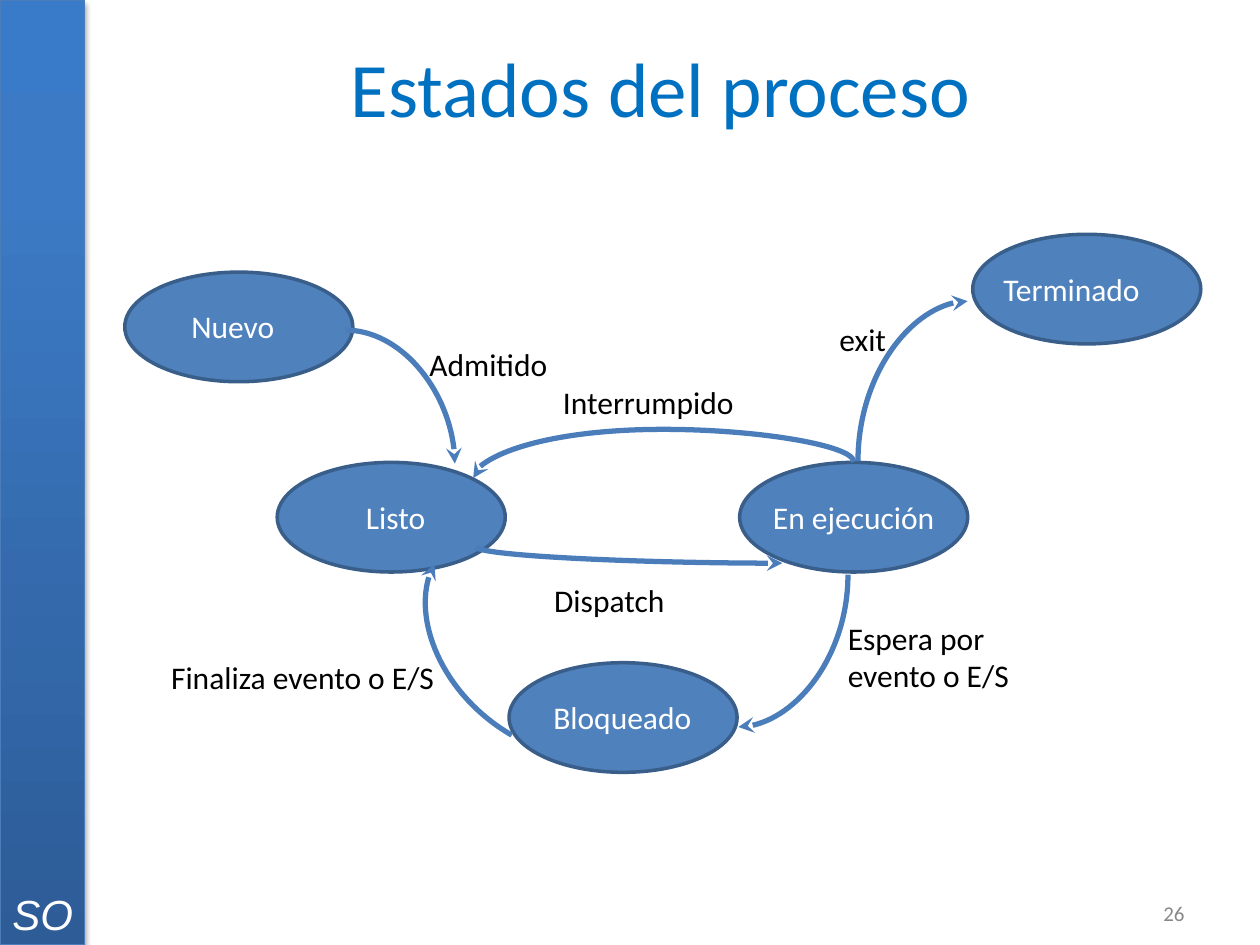
import copy
from typing import NamedTuple

import pptx
import pptx.dml.color
import pptx.enum.shapes
import pptx.enum.text
import pptx.oxml
import pptx.oxml.ns
import pptx.util

RGBColor = pptx.dml.color.RGBColor
Align = pptx.enum.text.PP_ALIGN
Anchor = pptx.enum.text.MSO_ANCHOR
ShapeType = pptx.enum.shapes.MSO_SHAPE

WHITE = RGBColor(0xFF, 0xFF, 0xFF)
BLACK = RGBColor(0x00, 0x00, 0x00)
GRAY = RGBColor(0x88, 0x88, 0x88)
TITLE_BLUE = RGBColor(0x00, 0x70, 0xC0)
STATE_FILL = RGBColor(0x4F, 0x81, 0xBD)
STATE_LINE = RGBColor(0x39, 0x5E, 0x89)
ARROW_BLUE = RGBColor(0x4A, 0x7D, 0xBA)
BAR_STOPS = [
    (0, RGBColor(0x2D, 0x5C, 0x97)),
    (0.8, RGBColor(0x3C, 0x7A, 0xC5)),
    (1, RGBColor(0x39, 0x7B, 0xC9)),
]

SLIDE_WIDTH = pptx.util.Inches(10)
SLIDE_HEIGHT = pptx.util.Inches(7.5)
COLUMNS, ROWS = 100, 75
STATE_WIDTH, STATE_HEIGHT = 18.1, 8.7
CAPTION_DROP, LINE_HEIGHT = 2.3, 4

STATES = [
    ("Nuevo", 0, 3, 4.3, 10.2, Align.LEFT),
    ("Listo", 12.1, 18.1, 4.3, 10.2, Align.CENTER),
    ("Bloqueado", 30.5, 34, 0.7, 16.6, Align.CENTER),
    ("En ejecución", 48.8, 18.1, 0, 18.1, Align.CENTER),
    ("Terminado", 67.3, 0, -0.8, 17.3, Align.CENTER),
]
ARROWS = [
    ((17.5, 7.6, 8.7, 10.6), 0, {}),
    ((56.2, 7.3, 12.7, 8.7), 270, {}),
    ((42.1, 3.6, 1.3, 30.2), 90, {"bend": -1.98}),
    ((47, 28.7, 12.1, 8.7), 90, {}),
    ((39.4, 13.3, 1.3, 24.3), 270, {"flip": True}),
    ((21.6, 28.6, 12.1, 8.7), 210, {}),
]
LABELS = [
    ("Admitido", (23.2, 8.3, 17.7, LINE_HEIGHT), Align.LEFT),
    ("exit", (53.5, 6.3, 7.9, LINE_HEIGHT), Align.RIGHT),
    ("Espera por evento o E/S", (56.4, 30, 20.1, 7.1), Align.LEFT),
    ("Finaliza evento o E/S", (2.7, 33.1, 24, LINE_HEIGHT), Align.LEFT),
    ("Interrumpido", (33.8, 11.3, 19, LINE_HEIGHT), Align.LEFT),
    ("Dispatch", (33.1, 27, 15.7, LINE_HEIGHT), Align.LEFT),
]


class Box(NamedTuple):
    left: float
    top: float
    width: float
    height: float

    def inner(self, left, top, width, height):
        return Box(self.left + left, self.top + top, width, height)

    def lengths(self):
        column, row = SLIDE_WIDTH / COLUMNS, SLIDE_HEIGHT / ROWS
        return (round(self.left * column), round(self.top * row),
                round(self.width * column), round(self.height * row))


def shadow_element(blur, distance, angle, alpha):
    return pptx.oxml.parse_xml(
        f'<a:effectLst {pptx.oxml.ns.nsdecls("a")}>'
        f'<a:outerShdw blurRad="{pptx.util.Pt(blur)}" dist="{pptx.util.Pt(distance)}" '
        f'dir="{angle * 60000}" algn="tl" rotWithShape="0">'
        f'<a:srgbClr val="000000"><a:alpha val="{alpha * 1000}"/></a:srgbClr>'
        '</a:outerShdw></a:effectLst>')


def write_text(shape, text, size=18, font="Calibri", color=BLACK,
               align=Align.LEFT, anchor=Anchor.TOP, italic=False):
    frame = shape.text_frame
    frame.word_wrap = True
    frame.vertical_anchor = anchor
    paragraph = frame.paragraphs[0]
    paragraph.alignment = align
    run = paragraph.add_run()
    run.text = text
    run.font.size = pptx.util.Pt(size)
    run.font.name = font
    run.font.italic = italic
    run.font.color.rgb = color
    return run


def add_text(shapes, box, text, **formatting):
    return write_text(shapes.add_textbox(*box.lengths()), text, **formatting)


def add_side_bar(slide, box):
    bar = slide.shapes.add_shape(ShapeType.RECTANGLE, *box.lengths())
    bar.fill.gradient()
    bar.fill.gradient_angle = 90
    last_stop = bar._element.xpath(".//a:gs")[-1]
    last_stop.addnext(copy.deepcopy(last_stop))
    for stop, (position, color) in zip(bar.fill.gradient_stops, BAR_STOPS):
        stop.position = position
        stop.color.rgb = color
    bar.line.color.rgb = ARROW_BLUE
    bar.line.width = pptx.util.Pt(0.75)
    bar._element.spPr.append(shadow_element(3.1, 1.8, 90, 35))
    add_text(slide.shapes, box.inner(0, box.height - 5, 6.9, 5), "SO",
             size=24, font="Arial", color=WHITE, italic=True)


def add_title(slide, box):
    title = slide.shapes.title
    title.left, title.top, title.width, title.height = box.lengths()
    run = write_text(title, "Estados del proceso", size=44, color=TITLE_BLUE,
                     align=Align.CENTER, anchor=Anchor.MIDDLE)
    fill = run._r.xpath("./a:rPr/a:solidFill")[0]
    fill.addnext(shadow_element(3, 3, 45, 43))


def add_state(shapes, box, name, caption_left, caption_width, align):
    ellipse = shapes.add_shape(ShapeType.OVAL, *box.lengths())
    ellipse.shadow.inherit = False
    ellipse.fill.solid()
    ellipse.fill.fore_color.rgb = STATE_FILL
    ellipse.line.color.rgb = STATE_LINE
    ellipse.line.width = pptx.util.Pt(2)
    caption = box.inner(caption_left, CAPTION_DROP, caption_width, LINE_HEIGHT)
    add_text(shapes, caption, name, color=WHITE, align=align)


def add_arrow(shapes, box, rotation, bend=None, flip=False):
    left, top, width, height = box.lengths()
    arrow = shapes.add_connector(pptx.enum.shapes.MSO_CONNECTOR.CURVE,
                                 left, top, left + width, top + height)
    arrow.line.color.rgb = ARROW_BLUE
    arrow.line.width = pptx.util.Pt(3)
    properties = arrow._element.spPr
    frame = properties.xpath("./a:xfrm")[0]
    frame.set("rot", str(rotation * 60000))
    if flip:
        frame.set("flipH", "1")
    geometry = properties.xpath("./a:prstGeom")[0]
    if bend is None:
        geometry.set("prst", "curvedConnector2")
    else:
        adjustments = geometry.get_or_add_avLst()
        guide = pptx.oxml.parse_xml(
            f'<a:gd {pptx.oxml.ns.nsdecls("a")} name="adj1" fmla="val {round(bend * 100000)}"/>')
        adjustments.append(guide)
    line = properties.xpath("./a:ln")[0]
    line.append(pptx.oxml.parse_xml(
        f'<a:tailEnd {pptx.oxml.ns.nsdecls("a")} type="stealth"/>'))
    properties.append(pptx.oxml.parse_xml(f'<a:effectLst {pptx.oxml.ns.nsdecls("a")}/>'))


def add_diagram(slide, box):
    shapes = slide.shapes.add_group_shape().shapes
    for name, left, top, *caption in STATES:
        add_state(shapes, box.inner(left, top, STATE_WIDTH, STATE_HEIGHT), name, *caption)
    for place, rotation, options in ARROWS:
        add_arrow(shapes, box.inner(*place), rotation, **options)
    for text, place, align in LABELS:
        add_text(shapes, box.inner(*place), text, align=align)


def main():
    presentation = pptx.Presentation()
    presentation.slide_width = SLIDE_WIDTH
    presentation.slide_height = SLIDE_HEIGHT
    slide = presentation.slides.add_slide(presentation.slide_layouts[5])
    add_side_bar(slide, Box(0, 0, 6.7, ROWS))
    add_title(slide, Box(6.7, 3, 91.5, 7.7))
    add_diagram(slide, Box(9.9, 18.6, 85.4, 42.7))
    add_text(slide.shapes, Box(89.4, 70.5, 5.6, 4), "26", size=12, color=GRAY,
             align=Align.RIGHT, anchor=Anchor.MIDDLE)
    presentation.save("out.pptx")


if __name__ == "__main__":
    main()
